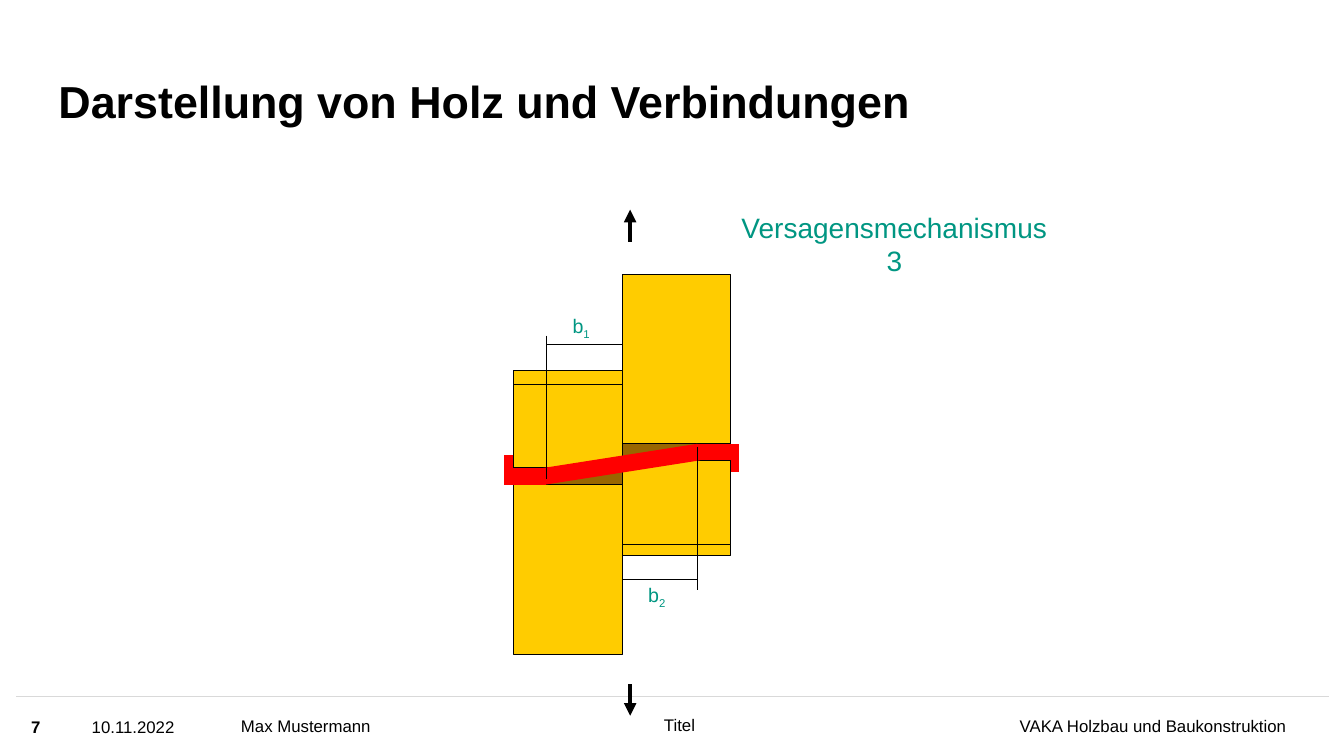
from lxml import etree
from pptx import Presentation
from pptx import util as u
from pptx.dml.color import RGBColor
from pptx.enum import shapes, text
from pptx.oxml import ns

COLORS = {"black": "000000", "rule": "D9D9D9", "wood": "FFCC00",
          "gap": "996600", "dowel": "FF0000", "label": "009682"}
INSETS = ("margin_left", "margin_top", "margin_right", "margin_bottom")
LEFT, MIDDLE, CENTER, RIGHT = (text.PP_ALIGN.LEFT, text.MSO_ANCHOR.MIDDLE,
                               text.PP_ALIGN.CENTER, text.PP_ALIGN.RIGHT)


def add_line(parent, start, end, color, width, arrow=False):
    line = parent.add_connector(shapes.MSO_CONNECTOR.STRAIGHT,
                                *[u.Inches(v) for v in (*start, *end)])
    line.line.color.rgb = RGBColor.from_string(COLORS[color])
    line.line.width = u.Pt(width)
    if arrow:
        etree.SubElement(line.line._get_or_add_ln(), ns.qn("a:tailEnd"), type="triangle")
    etree.SubElement(line._element.spPr, ns.qn("a:effectLst"))


def add_text(box, runs, align, inset=None):
    tf = s.shapes.add_textbox(*[u.Inches(v) for v in box]).text_frame
    tf.word_wrap = True
    tf.vertical_anchor = MIDDLE
    if inset is not None:
        for name in INSETS:
            setattr(tf, name, u.Inches(inset))
    p = tf.paragraphs[0]
    p.alignment = align
    for wording, size, color, bold in runs:
        for i, part in enumerate(wording.split("\n")):
            if i:
                p.add_line_break()
            r = p.add_run()
            r.text = part
            for name, value in {"name": "Arial", "size": u.Pt(size), "bold": bold}.items():
                setattr(r.font, name, value)
            r.font.color.rgb = RGBColor.from_string(COLORS[color])
    return p


prs = Presentation()
prs.slide_width, prs.slide_height = u.Inches(13.33), u.Inches(7.5)
s = prs.slides.add_slide(prs.slide_layouts[5])

title = s.shapes.title
title.left, title.top, title.width, title.height = [u.Inches(v) for v in (0.58, 0.43, 10.02, 0.84)]
tf = title.text_frame
tf.text = "Darstellung von Holz und Verbindungen"
for name, value in {"auto_size": text.MSO_AUTO_SIZE.NONE, "word_wrap": True,
                    "vertical_anchor": text.MSO_ANCHOR.BOTTOM,
                    **dict.fromkeys(INSETS, 0)}.items():
    setattr(tf, name, value)
p = tf.paragraphs[0]
p.alignment = LEFT
p.line_spacing = 0.9
for name, value in {"name": "Arial", "size": u.Pt(32), "bold": True}.items():
    setattr(p.font, name, value)
p.font.color.rgb = RGBColor.from_string(COLORS["black"])

add_line(s.shapes, (0.16, 6.91), (13.18, 6.91), "rule", 1)
footer = [
    ((8.03, 6.91, 4.73, 0.59), "VAKA Holzbau und Baukonstruktion", RIGHT, False),
    ((2.39, 6.91, 2.02, 0.59), "Max Mustermann", LEFT, False),
    ((4.41, 6.9, 4.66, 0.59), "Titel", CENTER, False),
    ((0.91, 6.92, 1.1, 0.58), "10.11.2022", LEFT, False),
    ((0.31, 6.92, 0.48, 0.58), "7", LEFT, True),
]
for box, wording, align, bold in footer:
    add_text(box, [(wording, 12, "black", bold)], align, 0)

BLOCK_W, BLOCK_H, GAP_H = 1.08, 2.68, 0.17
LEFT_X, JOINT_X = 5.09, 6.17
HINGE_1, HINGE_2 = 5.42, 6.92
for stage in (*range(1, 9), 0, 9):
    group = s.shapes.add_group_shape().shapes
    left_top = 3.68 + 0.13 * stage / 9
    right_top = 2.83 - 0.11 * stage / 9
    left_gap, right_gap = left_top + 0.83, right_top + 1.68
    left_y, right_y = left_gap + GAP_H / 2, right_gap + GAP_H / 2
    for x, y, h, color in [
        (LEFT_X, left_top, BLOCK_H, "wood"), (LEFT_X, left_gap, GAP_H, "gap"),
        (JOINT_X, right_top, BLOCK_H, "wood"), (JOINT_X, right_gap, GAP_H, "gap"),
    ]:
        sp = group.add_shape(shapes.MSO_SHAPE.RECTANGLE,
                             *[u.Inches(v) for v in (x, y, BLOCK_W, h)])
        sp.shadow.inherit = False
        sp.fill.solid()
        sp.fill.fore_color.rgb = RGBColor.from_string(COLORS[color])
        sp.line.color.rgb = RGBColor.from_string(COLORS["black"])
        sp.line.width = u.Pt(0.75)
    for start, end in [
        ((5, left_y), (HINGE_1, left_y)),
        ((HINGE_2, right_y), (7.33, right_y)),
        ((5.4, left_y), (6.93, right_y)),
    ]:
        add_line(group, start, end, "dowel", 12)

for start_y, end_y in [(6.79, 7.1), (2.4, 2.08)]:
    add_line(s.shapes, (6.25, start_y), (6.25, end_y), "black", 3, arrow=True)

add_text((7.08, 1.92, 3.58, 1), [("Versagensmechanismus\n3", 20, "label", False)], CENTER)
for x, y, index in [(5.58, 3.08, "1"), (6.33, 5.75, "2")]:
    p = add_text((x, y, 0.42, 0.33),
                 [("b", 14, "label", False), (index, 14, "label", False)], LEFT)
    p.runs[1].font._element.set("baseline", "-25000")
for start, end in [
    ((HINGE_1, 3.42), (JOINT_X, 3.42)), ((HINGE_1, 3.33), (HINGE_1, 4.75)),
    ((HINGE_2, 5.75), (JOINT_X, 5.75)), ((HINGE_2, 4.43), (HINGE_2, 5.85)),
]:
    add_line(s.shapes, start, end, "black", 0.75)

prs.save("out.pptx")
